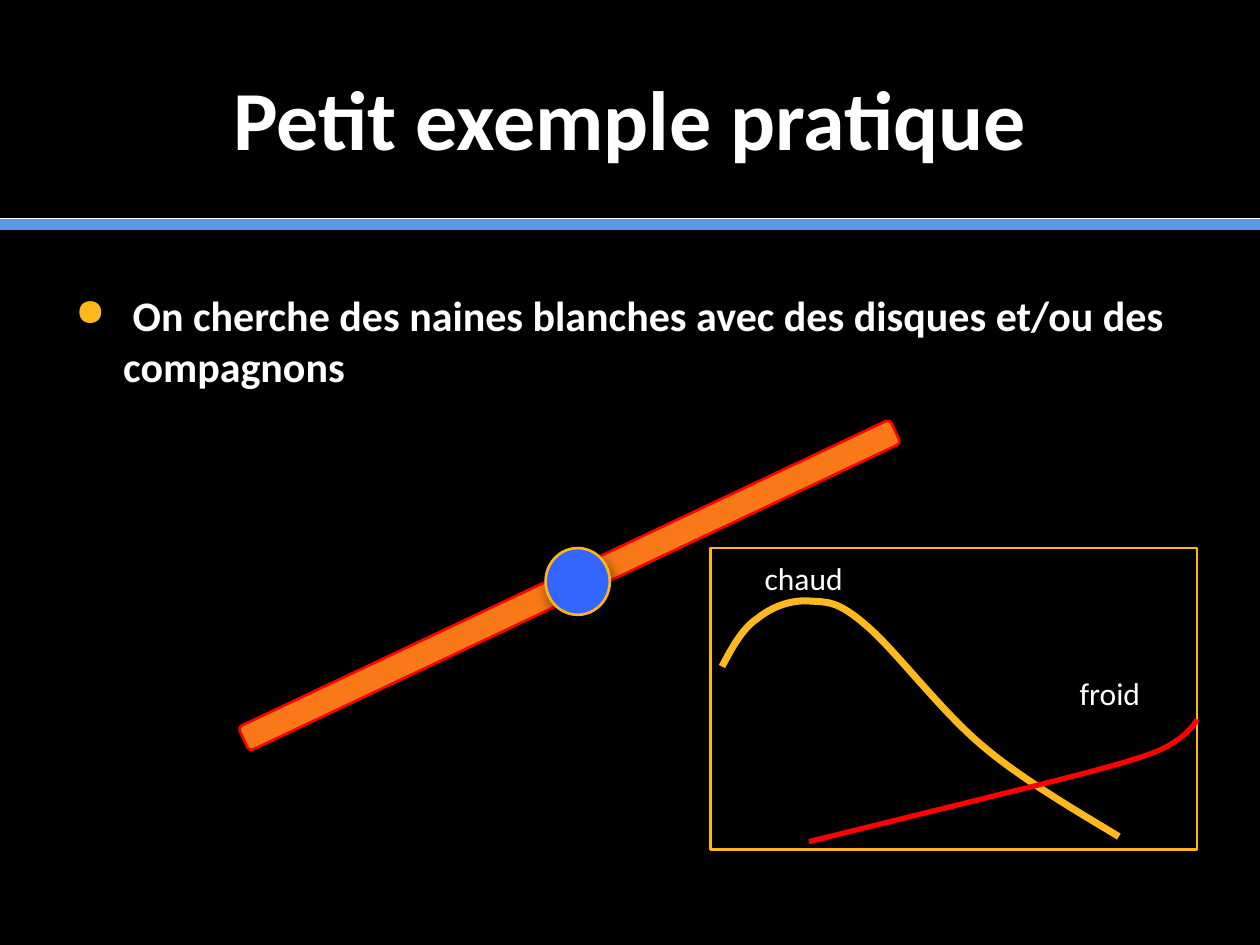
from dataclasses import dataclass

import pptx
import pptx.dml.color
import pptx.enum.shapes
import pptx.enum.text
import pptx.oxml
import pptx.oxml.ns
import pptx.util
from lxml import etree

PX = 9144  # EMU per px, 100 px to the inch
SHAPE = pptx.enum.shapes.MSO_SHAPE
ALIGN = pptx.enum.text.PP_ALIGN
qn = pptx.oxml.ns.qn


@dataclass(frozen=True)
class Theme:
    font: str = "Calibri"
    background: str = "000000"
    text: str = "FFFFFF"
    rule: str = "5799E8"
    gold: str = "FFB91D"
    outline: str = "FFB717"
    disc: str = "F97817"
    star: str = "3366FF"
    red: str = "FF0000"
    title_size: int = 48
    body_size: int = 24
    label_size: int = 18


THEME = Theme()


def rgb(value):
    return pptx.dml.color.RGBColor.from_string(value)


def emu(*lengths):
    return [round(n * PX) for n in lengths]


def set_line(s, color, width):
    s.line.color.rgb = rgb(color)
    s.line.width = pptx.util.Pt(width)


def add_part(slide, kind, box, fill, line):
    s = slide.shapes.add_shape(kind, *emu(*box))
    s.shadow.inherit = False
    if fill:
        s.fill.solid()
        s.fill.fore_color.rgb = rgb(fill)
    else:
        s.fill.background()
    set_line(s, line, 1.5)
    return s


def add_shadow(s):
    effects = s._element.spPr.find(qn("a:effectLst"))
    shadow = etree.SubElement(effects, qn("a:outerShdw"), blurRad="101600",
                              dist="63500", dir="4200000", rotWithShape="0")
    color = etree.SubElement(shadow, qn("a:srgbClr"), val="000000")
    etree.SubElement(color, qn("a:alpha"), val="50000")


def add_text(slide, box, text, size, bold=False, wrap=True):
    tf = slide.shapes.add_textbox(*emu(*box)).text_frame
    tf.word_wrap = wrap
    p = tf.paragraphs[0]
    p.text = text
    p.font.name = THEME.font
    p.font.size = pptx.util.Pt(size)
    p.font.bold = bold
    p.font.color.rgb = rgb(THEME.text)
    return tf, p


def add_curve(slide, box, points, color, width):
    """Draw a start point followed by triples of Bézier points."""
    x, y = box[:2]
    (x0, y0), *rest = [(x + dx, y + dy) for dx, dy in points]
    builder = slide.shapes.build_freeform(x0, y0, scale=PX)
    builder.add_line_segments(rest, close=False)
    s = builder.convert_to_shape()
    s.shadow.inherit = False
    s.fill.background()
    set_line(s, color, width)
    # Join each three line segments into one cubic segment
    outline = next(s._element.iter(qn("a:path")))
    segments = outline.findall(qn("a:lnTo"))
    for i in range(0, len(segments), 3):
        cubic = etree.SubElement(outline, qn("a:cubicBezTo"))
        for segment in segments[i:i + 3]:
            cubic.append(segment[0])
            outline.remove(segment)


def add_header(slide, box):
    x, y, w, h = box
    # Double rule along the bottom edge
    for offset, color, width in ((0, THEME.rule, 7), (-5, THEME.text, 0.5)):
        rule_y = y + h + offset
        s = slide.shapes.add_connector(
            pptx.enum.shapes.MSO_CONNECTOR.STRAIGHT,
            *emu(x, rule_y, x + w, rule_y))
        set_line(s, color, width)
        etree.SubElement(s._element.spPr, qn("a:effectLst"))
    # Title
    tf, p = add_text(slide, (x + 50, y + 30, w - 100, 125),
                     "Petit exemple pratique", THEME.title_size, bold=True)
    tf.vertical_anchor = pptx.enum.text.MSO_ANCHOR.MIDDLE
    p.alignment = ALIGN.CENTER


def add_body(slide, box):
    _, p = add_text(
        slide, box,
        " On cherche des naines blanches avec des disques et/ou des compagnons",
        THEME.body_size, bold=True)
    p.space_before = pptx.util.Pt(20)
    pPr = p._p.get_or_add_pPr()
    indent = emu(38)[0]
    pPr.set("marL", str(indent))
    pPr.set("indent", str(-indent))
    bullet_color = etree.Element(qn("a:buClr"))
    etree.SubElement(bullet_color, qn("a:srgbClr"), val=THEME.gold)
    bullet_size = etree.Element(qn("a:buSzPct"), val="90000")
    bullet = etree.Element(qn("a:buChar"), char="●")
    at = list(pPr).index(pPr.find(qn("a:defRPr")))
    pPr[at:at] = [bullet_color, bullet_size, bullet]


def add_disc(slide, box):
    s = add_part(slide, SHAPE.ROUNDED_RECTANGLE, box, THEME.disc, THEME.red)
    s.rotation = 334.7


def add_star(slide, box):
    add_shadow(add_part(slide, SHAPE.OVAL, box, THEME.star, THEME.outline))


def add_spectrum(slide, box):
    x, y = box[:2]
    # Frame
    add_shadow(add_part(slide, SHAPE.RECTANGLE, box, None, THEME.outline))
    # Hot and cold curves
    hot = [(9, 94), (17, 79), (25, 64), (37, 56), (48, 47), (63, 41), (78, 42),
           (92, 43), (100, 41), (123, 61), (146, 80), (183, 130), (217, 158),
           (250, 186), (303, 216), (324, 229)]
    cold = [(78, 233), (123, 222), (167, 211), (212, 200),
            (235, 194), (321, 174), (350, 163), (379, 152), (386, 136), (386, 136)]
    add_curve(slide, box, hot, THEME.gold, 4)
    add_curve(slide, box, cold, THEME.red, 3)
    # Curve labels
    for text, dx, dy, w in (("chaud", 33, 4, 83), ("froid", 283, 95, 69)):
        add_text(slide, (x + dx, y + dy, w, 40), text, THEME.label_size, wrap=False)


def main():
    prs = pptx.Presentation()
    prs.slide_width, prs.slide_height = emu(1000, 750)
    slide = prs.slides.add_slide(prs.slide_layouts[6])
    slide.background.fill.solid()
    slide.background.fill.fore_color.rgb = rgb(THEME.background)
    add_header(slide, (0, 0, 1000, 178))
    add_body(slide, (50, 225, 900, 433))
    add_disc(slide, (166, 454, 572, 21))
    add_star(slide, (433, 435, 51, 53))
    add_spectrum(slide, (564, 435, 386, 239))
    prs.save("out.pptx")


if __name__ == "__main__":
    main()
